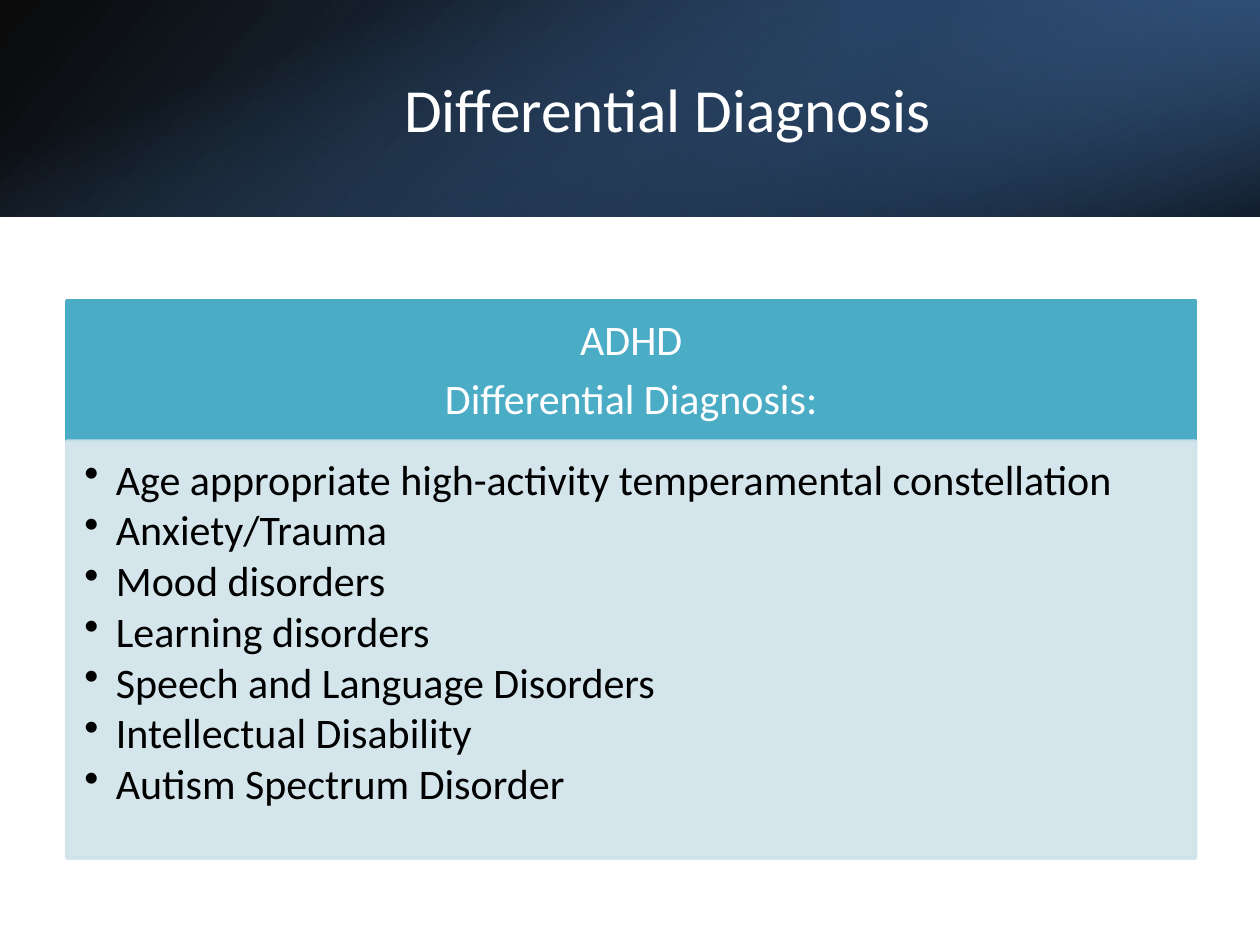
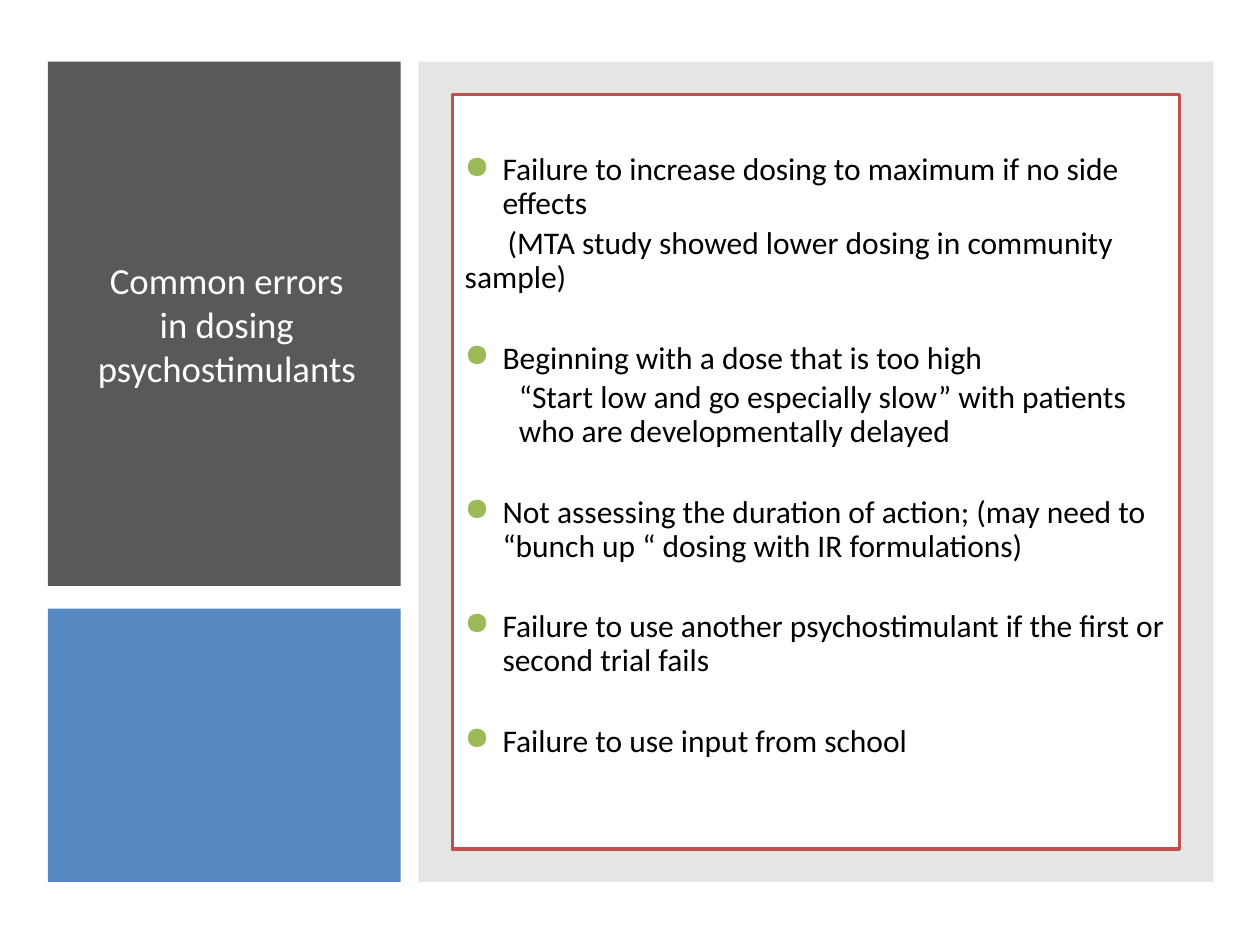
import pptx
import pptx.util
import pptx.dml.color
import pptx.enum.shapes
import pptx.enum.text
import pptx.oxml
import pptx.oxml.ns
import lxml.etree

WIDE, HIGH = 10, 7.5
FONT = "Calibri"
HUES = {
    "white": "FFFFFF", "black": "000000", "navy": "254061", "steel": "376092",
    "blue": "4F81BD", "teal": "4BACC6", "pale": "D0E3EA", "dark": "595959",
    "gray": "808080", "red": "C0504D", "green": "9BBB59",
}
ALIGN = pptx.enum.text.PP_ALIGN
ANCHOR = pptx.enum.text.MSO_ANCHOR
Inches, Pt = pptx.util.Inches, pptx.util.Pt
DRAW = pptx.oxml.ns.nsdecls("a")


def hue(name):
    return pptx.dml.color.RGBColor.from_string(HUES[name])


def spot(area):
    """Turn percent shares of the slide into left, top, width, height."""
    x, y, w, h = area
    return [Inches(part * side / 100)
            for part, side in ((x, WIDE), (y, HIGH), (w, WIDE), (h, HIGH))]


def paint(fill, name, alpha=100):
    fill.solid()
    fill.fore_color.rgb = hue(name)
    if alpha < 100:
        node = fill._xPr.find(".//" + pptx.oxml.ns.qn("a:srgbClr"))
        lxml.etree.SubElement(node, pptx.oxml.ns.qn("a:alpha"), val=str(alpha * 1000))


def panel(slide, area, fill, alpha=100, line=None):
    shape = slide.shapes.add_shape(pptx.enum.shapes.MSO_SHAPE.RECTANGLE, *spot(area))
    shape.shadow.inherit = False
    paint(shape.fill, fill, alpha)
    if line:
        paint(shape.line.fill, line, alpha)
        shape.line.width = Pt(2)
    else:
        shape.line.fill.background()
    return shape


def fade(slide, area, stops, angle, turn=0, flip=False):
    """Rectangle with a see-through gradient; stops are (place, hue, alpha)."""
    shape = panel(slide, area, "white")
    if turn == 90:
        mid_x = shape.left + shape.width // 2
        mid_y = shape.top + shape.height // 2
        shape.width, shape.height = shape.height, shape.width
        shape.left = mid_x - shape.width // 2
        shape.top = mid_y - shape.height // 2
    shape.rotation = turn
    props = shape._element.spPr
    if flip:
        props.xfrm.set("flipH", "1")
    marks = "".join(
        f'<a:gs pos="{place * 1000}"><a:srgbClr val="{HUES[name]}">'
        f'<a:alpha val="{alpha * 1000}"/></a:srgbClr></a:gs>'
        for place, name, alpha in stops)
    grad = pptx.oxml.parse_xml(
        f'<a:gradFill {DRAW}><a:gsLst>{marks}</a:gsLst>'
        f'<a:lin ang="{angle * 60000}" scaled="0"/></a:gradFill>')
    props.replace(props.find(pptx.oxml.ns.qn("a:solidFill")), grad)


def frame(shape, anchor=ANCHOR.MIDDLE, inset=(0.1, 0.05, 0.1, 0.05)):
    body = shape.text_frame
    body.word_wrap = True
    body.vertical_anchor = anchor
    (body.margin_left, body.margin_top,
     body.margin_right, body.margin_bottom) = map(Inches, inset)
    return body


def write(body, text, size=18, color="black", align=ALIGN.LEFT, left=0, first=0,
          bullet=None, tint=None, lead=0.9, before=0, after=0):
    """Add one paragraph to a text frame."""
    fresh = not body.text
    para = body.paragraphs[0] if fresh else body.add_paragraph()
    props = para._p.get_or_add_pPr()
    props.set("marL", str(Inches(left)))
    props.set("indent", str(Inches(first)))
    if tint:
        props.append(pptx.oxml.parse_xml(
            f'<a:buClr {DRAW}><a:srgbClr val="{HUES[tint]}"/></a:buClr>'))
    if bullet:
        props.append(pptx.oxml.parse_xml(f'<a:buChar {DRAW} char="{bullet}"/>'))
    para.alignment = align
    para.line_spacing = lead
    para.space_before = Pt(0 if fresh else before)
    para.space_after = Pt(after)
    run = para.add_run()
    run.text = text
    run.font.name, run.font.size = FONT, Pt(size)
    run.font.color.rgb = hue(color)


def title(slide, area, text, size):
    body = frame(slide.shapes.add_textbox(*spot(area)))
    write(body, text, size=size, color="white", align=ALIGN.CENTER, lead=1)


def banner(slide):
    high = 22.93
    fade(slide, (0, 0, 100, high), [(0, "black", 96), (100, "steel", 100)], 140, flip=True)
    fade(slide, (66.7, 0, 33.3, high), [(19, "navy", 68), (100, "blue", 79)],
         320, turn=180, flip=True)
    fade(slide, (0, 0, 100, high), [(23, "blue", 0), (99, "black", 74)], 340, turn=90)


def differ(slide):
    banner(slide)
    title(slide, (11.8, 5.07, 82.4, 12.8), "Differential Diagnosis", 35)

    # Heading bar
    left, wide, top, mid, low = 5.3, 89.6, 31.87, 46.67, 90.8
    head = frame(panel(slide, (left, top, wide, mid - top), "teal", line="teal"),
                 inset=(0.19, 0.11, 0.19, 0.11))
    for text in ("ADHD", "Differential Diagnosis:"):
        write(head, text, size=24, color="white", align=ALIGN.CENTER, after=8)

    # List of conditions
    body = frame(panel(slide, (left, mid, wide, low - mid), "pale", 90, "pale"),
                 ANCHOR.TOP, (0.14, 0.14, 0.19, 0.21))
    for text in ("Age appropriate high-activity temperamental constellation",
                 "Anxiety/Trauma", "Mood disorders", "Learning disorders",
                 "Speech and Language Disorders", "Intellectual Disability",
                 "Autism Spectrum Disorder"):
        write(body, text, size=24, left=0.25, first=-0.25, bullet="•", after=3.1)


def errors(slide):
    # Left column
    left, wide, top, low = 3.8, 28, 6.53, 93.33
    panel(slide, (left, top, wide, 55.47), "dark")
    title(slide, (6.6, 10.67, 22.8, 47.2), "Common errors in dosing psychostimulants", 21)
    panel(slide, (left, 64.4, wide, low - 64.4), "blue", 95)

    # Framed list
    panel(slide, (33.2, top, 63.1, low - top), "gray", 20)
    body = frame(panel(slide, (35.9, 10, 57.7, 79.87), "white", line="red"),
                 ANCHOR.TOP, (0.1, 0.47, 0.1, 0.05))
    point = dict(left=0.3, first=-0.3, bullet="●", tint="green", before=26.5)
    aside = dict(first=0.34, before=3.2)
    quote = dict(left=0.43, before=3.2)
    for text, form in (
            ("Failure to increase dosing to maximum if no side effects", point),
            ("(MTA study showed lower dosing in community sample)", aside),
            ("Beginning with a dose that is too high", point),
            ("“Start low and go especially slow” with patients who are "
             "developmentally delayed", quote),
            ("Not assessing the duration of action; (may need to “bunch up “ "
             "dosing with IR formulations)", point),
            ("Failure to use another psychostimulant if the first or second "
             "trial fails", point),
            ("Failure to use input from school", point)):
        write(body, text, **form)


def main():
    deck = pptx.Presentation()
    deck.slide_width, deck.slide_height = Inches(WIDE), Inches(HIGH)
    for build in (differ, errors):
        build(deck.slides.add_slide(deck.slide_layouts[6]))
    deck.save("out.pptx")


if __name__ == "__main__":
    main()
